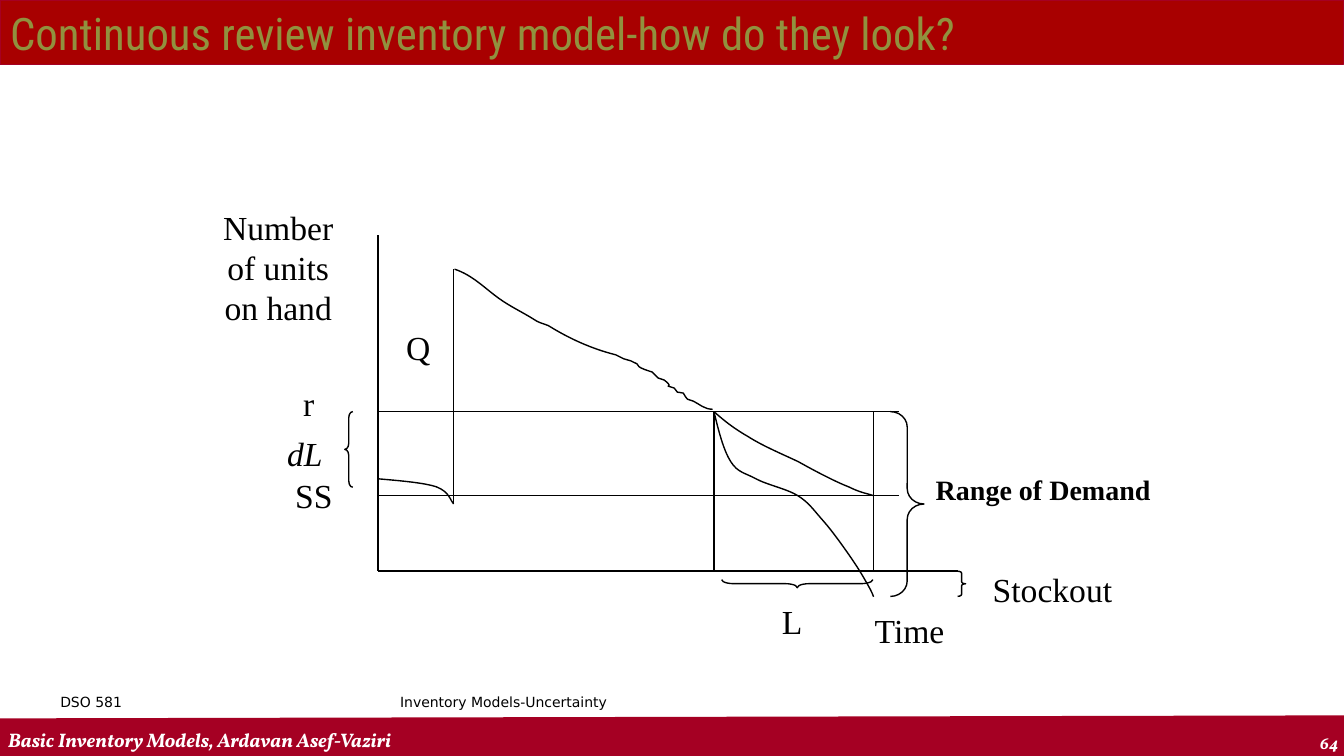
"""Build the continuous review inventory model slide."""

from dataclasses import dataclass

from lxml import etree
from pptx import Presentation
from pptx import util as u
from pptx.dml.color import RGBColor
from pptx.enum import shapes, text
from pptx.oxml.ns import qn

Point = tuple[float, float]
Box = tuple[float, float, float, float]


@dataclass(frozen=True)
class Theme:
    black: str = "000000"
    white: str = "FFFFFF"
    band: str = "A80000"
    crimson: str = "A50023"
    olive: str = "91913E"
    title_font: str = "Roboto Condensed"
    footer_font: str = "Vollkorn"
    course_font: str = "DejaVu Sans"
    label_font: str = "Times New Roman"
    title_size: float = 32
    label_size: float = 24
    range_size: float = 20
    footer_size: float = 14
    number_size: float = 12
    course_size: float = 10
    hairline: float = 0.75
    stroke: float = 1
    footer_stroke: float = 29.25


THEME = Theme()
LEFT, CENTER, RIGHT = text.PP_ALIGN.LEFT, text.PP_ALIGN.CENTER, text.PP_ALIGN.RIGHT


@dataclass(frozen=True)
class Label:
    words: str
    box: Box
    size: float = THEME.label_size
    font: str = THEME.label_font
    color: str = THEME.black
    bold: bool = False
    italic: bool = False
    align: text.PP_ALIGN = LEFT
    anchor: text.MSO_ANCHOR = text.MSO_ANCHOR.TOP
    wrap: bool = True
    grow: bool = True


@dataclass(frozen=True)
class Line:
    start: Point
    end: Point
    color: str = THEME.black
    width: float = THEME.stroke


@dataclass(frozen=True)
class Brace:
    kind: shapes.MSO_SHAPE
    box: Box
    bend: float
    rotation: float = 0


@dataclass(frozen=True)
class Curve:
    start: Point
    beziers: tuple[tuple[float, ...], ...]


SLIDE_WIDTH, SLIDE_HEIGHT = 40 / 3, 7.5
AXIS_X, AXIS_Y, AXIS_TOP = 3.75, 17 / 3, 7 / 3
ORDER_X, LEAD_X, ARRIVAL_X = 4.5, 85 / 12, 26 / 3
REORDER_Y, SAFETY_Y, LEVEL_END = 49 / 12, 59 / 12, 107 / 12

FOOTER = (
    Line((-0.01, 7.33), (13.36, 7.3), THEME.crimson, THEME.footer_stroke),
    Label("64", (12.38, 7.22, 1, 0.3), THEME.number_size, THEME.footer_font, THEME.white,
          bold=True, italic=True, align=RIGHT),
    Label("Basic Inventory Models, Ardavan Asef-Vaziri", (-0.02, 7.16, 10.45, 0.34),
          THEME.footer_size, THEME.footer_font, THEME.white, bold=True, italic=True,
          anchor=text.MSO_ANCHOR.BOTTOM),
)
COURSE = (
    Label("DSO 581", (0.5, 6.83, 2.33, 0.5), THEME.course_size, THEME.course_font, grow=False),
    Label("Inventory Models-Uncertainty", (3.41, 6.83, 3.17, 0.5), THEME.course_size,
          THEME.course_font, align=CENTER, grow=False),
)
DIAGRAM = (
    Line((AXIS_X, AXIS_TOP), (AXIS_X, AXIS_Y)),
    Line((AXIS_X, AXIS_Y), (9.5, AXIS_Y)),
    Label("Number of units on hand", (2.09, 2, 1.34, 1.31), align=CENTER),
    Label("Time", (8.58, 6, 0.9, 0.5), wrap=False),
    Line((ORDER_X, 5), (ORDER_X, 8 / 3)),
    Label("Q", (3.93, 3.19, 0.44, 0.5), wrap=False),
    Curve((AXIS_X, 4.75), (
        (3.98, 4.77, 4.21, 4.79, 4.33, 4.83), (4.46, 4.88, 4.47, 4.97, ORDER_X, 5),
    )),
    Label("r", (2.91, 3.75, 0.31, 0.51), wrap=False),
    Line((AXIS_X, REORDER_Y), (LEVEL_END, REORDER_Y)),
    Curve((4.51, 2.67), (
        (4.69, 2.73, 4.81, 2.86, 4.95, 2.96), (5.06, 3.04, 5.19, 3.1, 5.3, 3.17),
        (5.34, 3.2, 5.39, 3.21, 5.44, 3.23), (5.65, 3.36, 5.87, 3.46, 6.11, 3.52),
        (6.14, 3.53, 6.16, 3.55, 6.19, 3.56), (6.21, 3.57, 6.24, 3.57, 6.26, 3.58),
        (6.28, 3.59, 6.3, 3.6, 6.32, 3.61), (6.34, 3.63, 6.34, 3.65, 6.36, 3.65),
        (6.4, 3.67, 6.47, 3.69, 6.47, 3.69), (6.49, 3.71, 6.51, 3.73, 6.53, 3.75),
        (6.55, 3.76, 6.57, 3.76, 6.59, 3.77), (6.72, 3.87, 6.54, 3.8, 6.69, 3.85),
        (6.7, 3.86, 6.71, 3.88, 6.72, 3.89), (6.74, 3.9, 6.77, 3.89, 6.78, 3.9),
        (6.8, 3.92, 6.8, 3.95, 6.82, 3.96), (6.84, 3.97, 6.86, 3.97, 6.88, 3.98),
        (6.94, 4.01, 6.99, 4.06, 7.07, 4.06),
    )),
    Line((LEAD_X, REORDER_Y), (LEAD_X, AXIS_Y)),
    Line((ARRIVAL_X, REORDER_Y), (ARRIVAL_X, AXIS_Y)),
    Label("L", (7.66, 5.91, 0.4, 0.5), wrap=False),
    Line((AXIS_X, SAFETY_Y), (LEVEL_END, SAFETY_Y)),
    Label("SS", (2.83, 4.66, 0.57, 0.5)),
    Brace(shapes.MSO_SHAPE.LEFT_BRACE, (7.87, 5.04, 0.08, 1.5), 1.5, 270),
    Curve((LEAD_X, REORDER_Y), (
        (7.18, 4.17, 7.28, 4.25, 7.42, 4.33), (7.56, 4.42, 7.75, 4.5, 7.92, 4.58),
        (8.08, 4.67, 8.29, 4.78, 8.42, 4.83), (8.54, 4.89, 8.62, 4.9, ARRIVAL_X, SAFETY_Y),
    )),
    Curve((LEAD_X, REORDER_Y), (
        (7.13, 4.28, 7.18, 4.47, 7.25, 4.58), (7.32, 4.69, 7.39, 4.69, 7.5, 4.75),
        (7.61, 4.81, 7.81, 4.85, 7.92, 4.92), (8.03, 4.99, 8.08, 5.07, 8.17, 5.17),
        (8.25, 5.26, 8.35, 5.4, 8.42, 5.5), (8.49, 5.6, 8.54, 5.68, 8.58, 5.75),
        (8.62, 5.82, 8.65, 5.87, ARRIVAL_X, 5.92),
    )),
    Brace(shapes.MSO_SHAPE.RIGHT_BRACE, (53 / 6, REORDER_Y, 1 / 3, 11 / 6), 0.46),
    Label("Range of Demand", (9.03, 4.64, 2.64, 0.44), THEME.range_size, bold=True, align=CENTER),
    Brace(shapes.MSO_SHAPE.LEFT_BRACE, (3.42, REORDER_Y, 0.08, 0.75), 0.75),
    Label("dL", (2.75, 4.25, 0.58, 0.5), italic=True),
    Brace(shapes.MSO_SHAPE.RIGHT_BRACE, (9.5, AXIS_Y, 0.08, 0.25), 0.25),
    Label("Stockout", (9.75, 5.59, 1.39, 0.5), wrap=False),
)


def inches(values: tuple[float, ...]) -> list[u.Length]:
    return [u.Inches(value) for value in values]


def style_outline(shape, color: str = THEME.black, width: float = THEME.stroke) -> None:
    shape.line.color.rgb = RGBColor.from_string(color)
    shape.line.width = u.Pt(width)


def write_label(shape, label: Label) -> None:
    frame = shape.text_frame
    frame.word_wrap = label.wrap
    frame.auto_size = text.MSO_AUTO_SIZE.SHAPE_TO_FIT_TEXT if label.grow else text.MSO_AUTO_SIZE.NONE
    frame.vertical_anchor = label.anchor
    paragraph = frame.paragraphs[0]
    paragraph.alignment = label.align
    run = paragraph.add_run()
    run.text = label.words
    run.font.name, run.font.size = label.font, u.Pt(label.size)
    run.font.bold, run.font.italic = label.bold, label.italic
    run.font.color.rgb = RGBColor.from_string(label.color)


def add_label(slide, label: Label) -> None:
    write_label(slide.shapes.add_textbox(*inches(label.box)), label)


def add_line(slide, line: Line) -> None:
    connector = slide.shapes.add_connector(
        shapes.MSO_CONNECTOR.STRAIGHT, *inches(line.start + line.end))
    style_outline(connector, line.color, line.width)
    etree.SubElement(connector.element.spPr, qn("a:effectLst"))


def finish_outline(shape) -> None:
    shape.shadow.inherit = False
    shape.fill.background()
    style_outline(shape)


def add_brace(slide, brace: Brace) -> None:
    shape = slide.shapes.add_shape(brace.kind, *inches(brace.box))
    shape.adjustments[0] = brace.bend
    shape.rotation = brace.rotation
    finish_outline(shape)


def add_curve(slide, curve: Curve) -> None:
    builder = slide.shapes.build_freeform(*inches(curve.start))
    builder.add_line_segments(
        [inches(bezier[i:i + 2]) for bezier in curve.beziers for i in (0, 2, 4)], close=False)
    shape = builder.convert_to_shape()
    segments = list(shape.element.iter(qn("a:lnTo")))
    for first, second, third in zip(segments[::3], segments[1::3], segments[2::3]):
        first.tag = qn("a:cubicBezTo")
        for segment in (second, third):
            first.append(segment[0])
            segment.getparent().remove(segment)
    finish_outline(shape)


def add_band(slide) -> None:
    band = slide.shapes.add_shape(
        shapes.MSO_SHAPE.RECTANGLE, *inches((0, -0.01, SLIDE_WIDTH, 0.64)))
    band.shadow.inherit = False
    band.fill.solid()
    band.fill.fore_color.rgb = RGBColor.from_string(THEME.band)
    style_outline(band, THEME.band, THEME.hairline)


def place_title(slide) -> None:
    title, box = slide.shapes.title, (0, 0, SLIDE_WIDTH, 0.64)
    title.left, title.top, title.width, title.height = inches(box)
    style_outline(title, THEME.crimson, THEME.hairline)
    write_label(title, Label("Continuous review inventory model-how do they look?", box,
                             THEME.title_size, THEME.title_font, THEME.olive,
                             anchor=text.MSO_ANCHOR.MIDDLE, grow=False))
    title.element.getparent().append(title.element)


def draw(slide, parts: tuple[Label | Line | Brace | Curve, ...]) -> None:
    drawers = {Label: add_label, Line: add_line, Brace: add_brace, Curve: add_curve}
    for part in parts:
        drawers[type(part)](slide, part)


def main() -> None:
    presentation = Presentation()
    presentation.slide_width, presentation.slide_height = inches((SLIDE_WIDTH, SLIDE_HEIGHT))
    slide = presentation.slides.add_slide(presentation.slide_layouts[5])
    draw(slide, FOOTER)
    add_band(slide)
    draw(slide, COURSE)
    place_title(slide)
    draw(slide, DIAGRAM)
    presentation.save("out.pptx")


if __name__ == "__main__":
    main()
